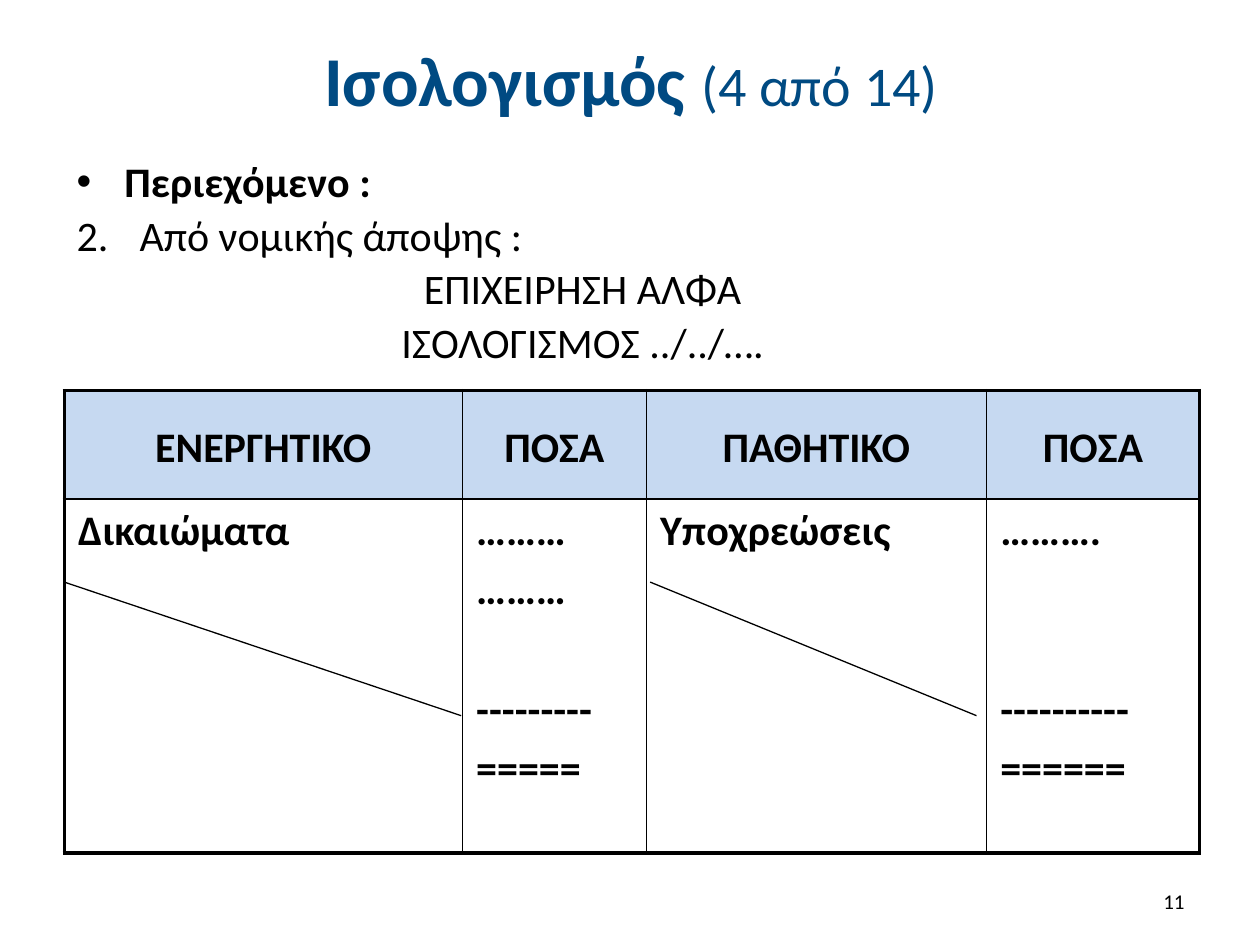
from lxml.etree import SubElement
from pptx import Presentation
from pptx.dml.color import RGBColor
from pptx.enum.shapes import MSO_CONNECTOR
from pptx.enum.text import MSO_ANCHOR, PP_ALIGN as AL
from pptx.oxml.ns import qn
from pptx.util import Inches, Pt

# Content
COLORS = {"title": "004A82", "text": "000000", "header": "C6D9F1", "white": "FFFFFF"}
FONT = "Calibri"
TITLE = [("Ισολογισμός ", 40, True), ("(4 από 14)", 32, False)]
BULLET = ("buChar", {"char": "•"})
NUMBER = ("buAutoNum", {"type": "arabicPeriod", "startAt": "2"})
BODY = [  # text, bold, marker, indent
    ("Περιεχόμενο :", True, BULLET, 0.38),
    ("Από νομικής άποψης :", False, NUMBER, 0.5),
    ("ΕΠΙΧΕΙΡΗΣΗ ΑΛΦΑ", False, None, 0),
    ("ΙΣΟΛΟΓΙΣΜΟΣ ../../….", False, None, 0),
]
HEADERS = ["ENEΡΓΗΤΙΚΟ", "ΠΟΣΑ", "ΠΑΘΗΤΙΚΟ", "ΠΟΣΑ"]
ENTRIES = [  # per column: (text, lines skipped above it)
    [("Δικαιώματα", 0)],
    [("………", 0), ("………", 0), ("---------", 1), ("=====", 0)],
    [("Υποχρεώσεις", 0)],
    [("……….", 0), ("----------", 2), ("======", 0)],
]
COLS, ROWS = [3.16, 1.46, 2.7, 1.69], [0.86, 2.81]
LEFT, TABLE_TOP = 0.51, 3.1
STRIKES = [(LEFT, 3.66), (5.16, 7.75)]  # left and right ends
STRIKE_Y = (4.62, 5.68)
GAP, LINE = 4.8, 29.3  # paragraph gap and line height at 24 pt
THICK, THIN = 2.25, 1


def rgb(name):
    return RGBColor.from_string(COLORS[name])


def add_run(p, text, size=24, bold=False, color="text"):
    r = p.add_run()
    r.text = text
    for key, value in {"name": FONT, "size": Pt(size), "bold": bold}.items():
        setattr(r.font, key, value)
    r.font.color.rgb = rgb(color)


def add_box(x, y, w, h, anchor):
    tf = slide.shapes.add_textbox(*map(Inches, (x, y, w, h))).text_frame
    tf.word_wrap = True
    tf.vertical_anchor = anchor
    return tf


def next_paragraph(tf, i):
    return tf.add_paragraph() if i else tf.paragraphs[0]


def set_borders(cell, widths):
    tc_pr = cell._tc.get_or_add_tcPr()
    for i, (side, width) in enumerate(zip("LRTB", widths)):
        ln = tc_pr.makeelement(qn(f"a:ln{side}"), {"w": str(Pt(width))})
        fill = SubElement(ln, qn("a:solidFill"))
        SubElement(fill, qn("a:srgbClr"), val=COLORS["text"])
        tc_pr.insert(i, ln)


prs = Presentation()
prs.slide_width, prs.slide_height = Inches(10), Inches(7.5)
slide = prs.slides.add_slide(prs.slide_layouts[6])

# Title
p = add_box(LEFT, 0.13, 9, 0.99, MSO_ANCHOR.MIDDLE).paragraphs[0]
p.alignment = AL.CENTER
for text, size, bold in TITLE:
    add_run(p, text, size, bold, "title")

# Body
tf = add_box(LEFT, 1.23, 8.23, 1.8, MSO_ANCHOR.TOP)
for i, (text, bold, marker, indent) in enumerate(BODY):
    p = next_paragraph(tf, i)
    p.line_spacing = 0.9
    p.space_before = Pt(GAP if i else 0)
    if marker:
        p_pr = p._p.get_or_add_pPr()
        p_pr.set("marL", str(Inches(indent)))
        p_pr.set("indent", str(-Inches(indent)))
        if marker is BULLET:
            SubElement(p_pr, qn("a:buFont"), typeface="Arial")
        SubElement(p_pr, qn(f"a:{marker[0]}"), marker[1])
    else:
        p.alignment = AL.CENTER
    add_run(p, text, bold=bold)

# Balance sheet table
table = slide.shapes.add_table(
    len(ROWS), len(COLS),
    *map(Inches, (LEFT, TABLE_TOP, sum(COLS), sum(ROWS)))).table
for col, width in zip(table.columns, COLS):
    col.width = Inches(width)
for row, height in zip(table.rows, ROWS):
    row.height = Inches(height)
grid = [[[(text, 0)] for text in HEADERS], ENTRIES]
for y, row in enumerate(grid):
    for x, lines in enumerate(row):
        cell = table.cell(y, x)
        cell.margin_left = cell.margin_right = Inches(0.11)
        cell.fill.solid()
        cell.fill.fore_color.rgb = rgb("white" if y else "header")
        outer = (x == 0, x == len(COLS) - 1, y == 0, y == len(ROWS) - 1)
        set_borders(cell, [THICK if edge else THIN for edge in outer])
        for i, (text, skipped) in enumerate(lines):
            p = next_paragraph(cell.text_frame, i)
            p.space_before = Pt(GAP + skipped * (GAP + LINE) if i else 0)
            if y == 0:
                p.alignment, p.line_spacing = AL.CENTER, 1.5
            add_run(p, text, bold=True)

# Diagonal strikes over the unused space
for x1, x2 in STRIKES:
    line = slide.shapes.add_connector(
        MSO_CONNECTOR.STRAIGHT,
        *map(Inches, (x1, STRIKE_Y[0], x2, STRIKE_Y[1])))
    line.line.color.rgb = rgb("text")
    line.line.width = Pt(0.75)
    SubElement(line._element.spPr, qn("a:effectLst"))

# Slide number
p = add_box(7.17, 6.95, 2.33, 0.4, MSO_ANCHOR.MIDDLE).paragraphs[0]
p.alignment = AL.RIGHT
add_run(p, "11", 12)

prs.save("out.pptx")
